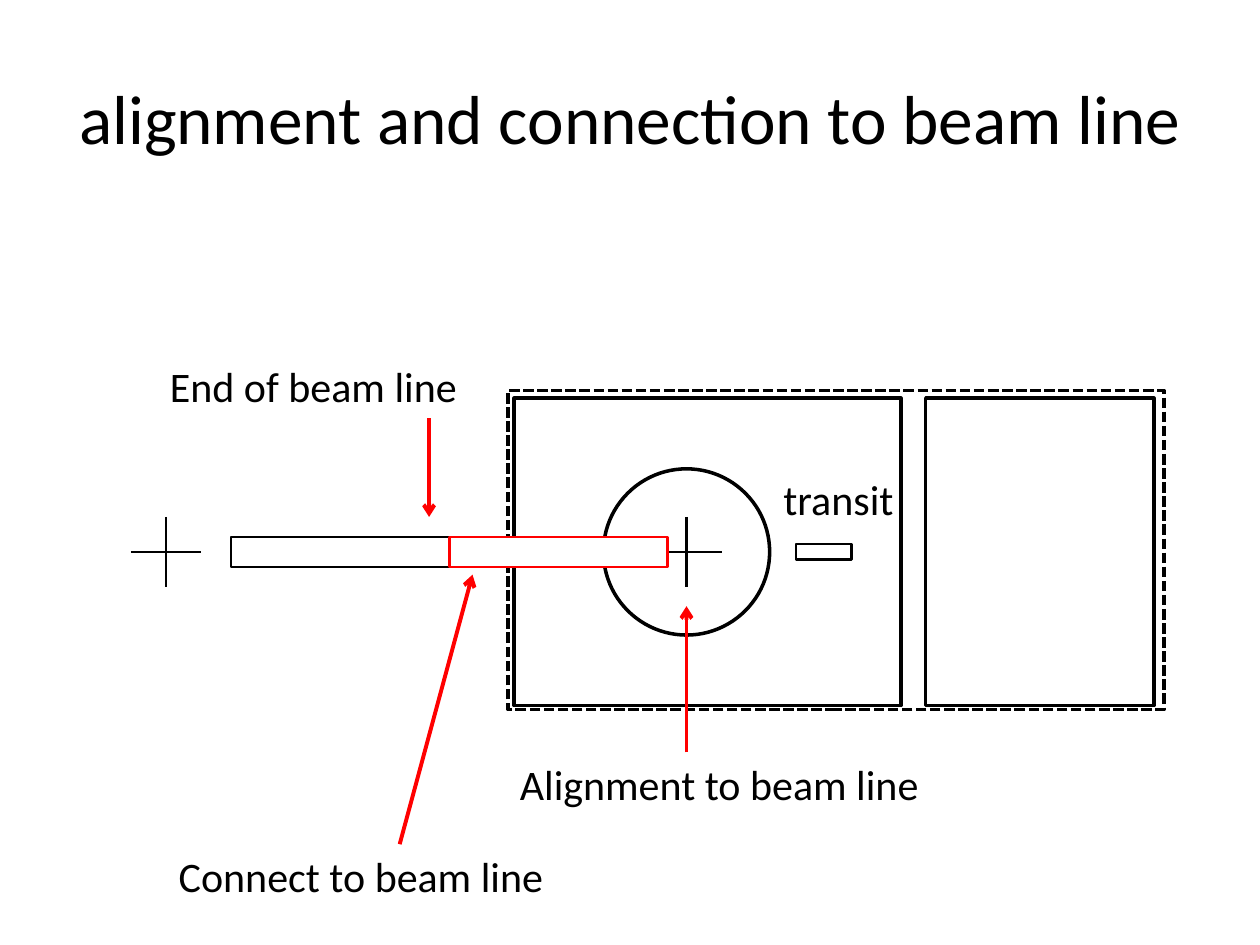
"""Build a slide showing alignment and connection to a beam line."""
from dataclasses import dataclass

from lxml.etree import SubElement
from pptx import Presentation
from pptx.dml.color import RGBColor
from pptx.enum.dml import MSO_LINE
from pptx.enum.shapes import MSO_CONNECTOR, MSO_SHAPE
from pptx.enum.text import MSO_ANCHOR, MSO_AUTO_SIZE, PP_ALIGN
from pptx.oxml.ns import qn
from pptx.util import Pt


@dataclass(frozen=True)
class Theme:
    ink: RGBColor = RGBColor(0, 0, 0)
    accent: RGBColor = RGBColor(255, 0, 0)
    paper: RGBColor = RGBColor(255, 255, 255)
    font: str = "Calibri"
    title_size: float = 39.6
    label_size: float = 24


theme = Theme()


def format_text(frame, size):
    for para in frame.paragraphs:
        for span in para.runs:
            span.font.name = theme.font
            span.font.size = Pt(size)
            span.font.color.rgb = theme.ink


def add_line(page, start, end, color, width):
    line = page.shapes.add_connector(
        MSO_CONNECTOR.STRAIGHT, *(Pt(value) for value in (*start, *end)))
    line.line.color.rgb = color
    line.line.width = Pt(width)
    SubElement(line._element.spPr, qn("a:effectLst"))
    return line


deck = Presentation()
deck.slide_width, deck.slide_height = Pt(720), Pt(540)
page = deck.slides.add_slide(deck.slide_layouts[5])

title = page.shapes.title
title.left, title.top, title.width, title.height = Pt(36), Pt(21.6), Pt(648), Pt(90)
title.text_frame.text = "alignment and connection to beam line"
title.text_frame.vertical_anchor = MSO_ANCHOR.MIDDLE
title.text_frame.paragraphs[0].alignment = PP_ALIGN.CENTER
format_text(title.text_frame, theme.title_size)

axis = 315.4
target = 392.3
cross_arm = 20
radius = 47.5
room_top, room_height = 227.5, 175.7
tube_left, tube_length, tube_height = 132, 124.8, 17.2
transit_height = 8.8

for center in (target, 94.8):
    add_line(page, (center - cross_arm, axis), (center + cross_arm, axis), theme.ink, 1.5)
    add_line(page, (center, axis - cross_arm), (center, axis + cross_arm), theme.ink, 1.5)
crosses = list(page.shapes)[1:]

outlines = [
    (MSO_SHAPE.RECTANGLE, 290.2, 223.2, 375, 182.2, theme.ink, 2, MSO_LINE.SQUARE_DOT),
    (MSO_SHAPE.RECTANGLE, 293.8, room_top, 221, room_height, theme.ink, 2, None),
    (MSO_SHAPE.OVAL, target - radius, axis - radius, 2 * radius, 2 * radius, theme.ink, 2, None),
    (MSO_SHAPE.RECTANGLE, 529, room_top, 130.4, room_height, theme.ink, 2, None),
    (MSO_SHAPE.RECTANGLE, 455, axis - transit_height / 2, 31.8, transit_height, theme.ink, 1.5, None),
    (MSO_SHAPE.RECTANGLE, tube_left, axis - tube_height / 2, tube_length, tube_height,
     theme.ink, 1.5, None),
    (MSO_SHAPE.RECTANGLE, tube_left + tube_length, axis - tube_height / 2, tube_length, tube_height,
     theme.accent, 1.5, None),
]
for kind, left, top, width, height, color, weight, dash in outlines:
    box = page.shapes.add_shape(kind, Pt(left), Pt(top), Pt(width), Pt(height))
    box.shadow.inherit = False
    box.fill.solid()
    box.fill.fore_color.rgb = theme.paper
    box.line.color.rgb = color
    box.line.width = Pt(weight)
    box.line.dash_style = dash
    if color == theme.accent:
        for cross in crosses:
            box._element.addprevious(cross._element)

arrows = [
    ((target, 430), (target, 346.4)),
    ((245.2, 239), (245.2, 295.4)),
    ((228.4, 482.4), (270, 328.4)),
]
for start, end in arrows:
    arrow = add_line(page, start, end, theme.accent, 2.25)
    SubElement(arrow.line._get_or_add_ln(), qn("a:tailEnd"), type="arrow")

labels = [
    ("End of beam line", 90, 202.4, 180),
    ("Alignment to beam line", 290, 429.8, 244),
    ("Connect to beam line", 95, 482.4, 224.6),
    ("transit", 440.6, 267.2, 77.8),
]
for text, left, top, width in labels:
    label = page.shapes.add_textbox(Pt(left), Pt(top), Pt(width), Pt(36))
    label.text_frame.text = text
    label.text_frame.word_wrap = False
    label.text_frame.auto_size = MSO_AUTO_SIZE.SHAPE_TO_FIT_TEXT
    format_text(label.text_frame, theme.label_size)

deck.save("out.pptx")
